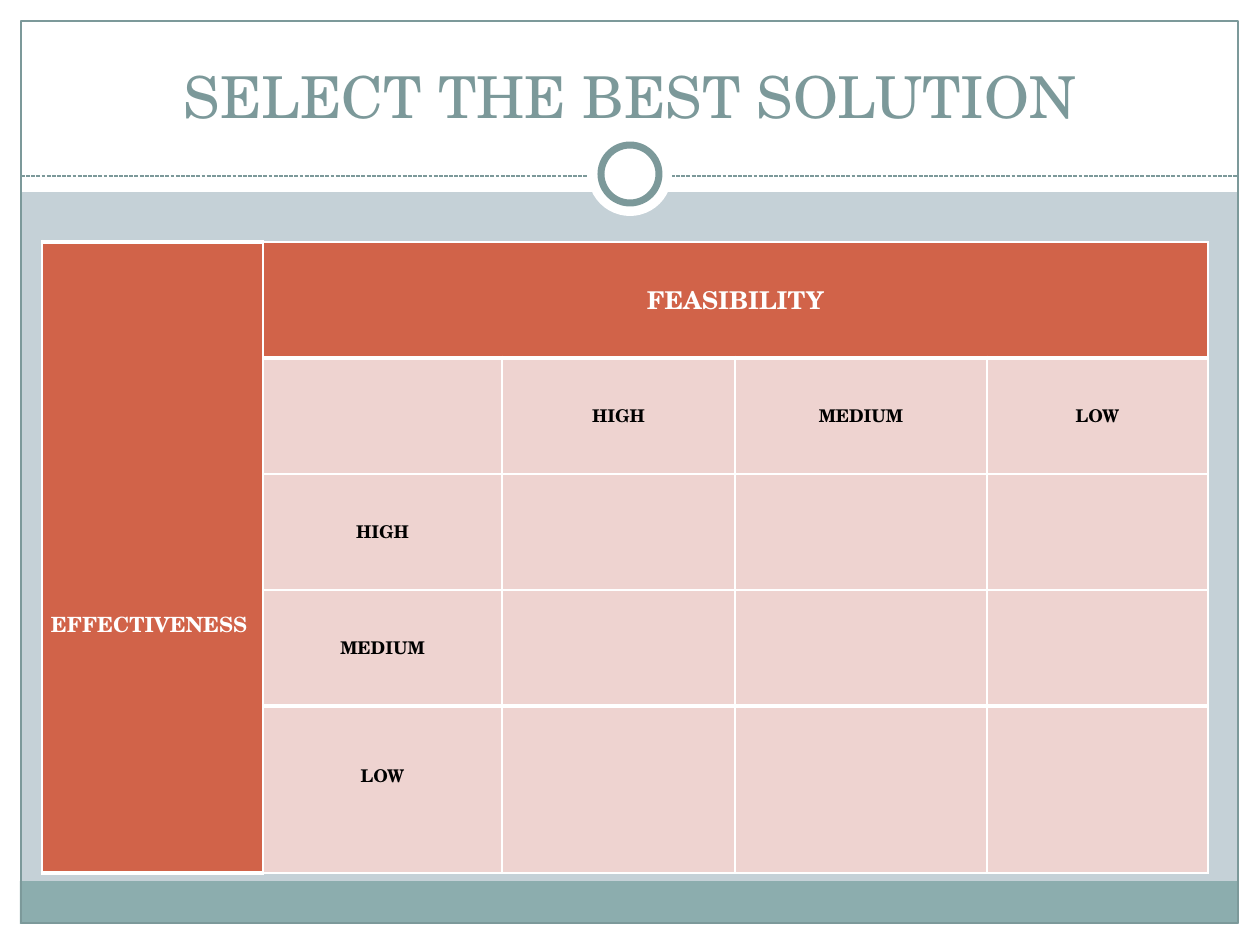
import pptx
import pptx.util
import pptx.dml.color
import pptx.enum.dml
import pptx.enum.shapes
import pptx.enum.text
import pptx.oxml
import pptx.oxml.ns

RGB = pptx.dml.color.RGBColor
WHITE = RGB(0xFF, 0xFF, 0xFF)
BLACK = RGB(0, 0, 0)
MIST = RGB(0xC5, 0xD1, 0xD7)
SAGE = RGB(0x8C, 0xAD, 0xAE)
TEAL = RGB(0x7C, 0x99, 0x9A)
RUST = RGB(0xD1, 0x63, 0x49)
PINK = RGB(0xEE, 0xD3, 0xD0)
FONT = "TeX Gyre Schola"

TITLE = "SELECT THE BEST SOLUTION"
LEVELS = ["HIGH", "MEDIUM", "LOW"]
SIDE = "EFFECTIVENESS"
HEAD = "FEASIBILITY"

WIDE, HIGH = 1260, 945
COLS = [221, 239, 233, 252, 221]
ROWS = [116, 116, 116, 116, 167]
TABLE_AT = (42, 242)
PAD = 9
SIDE_DROP = 134   # top inset that sets the side label below the middle
LAST_LIFT = 27    # bottom inset that lifts the label of the last row

RECT = pptx.enum.shapes.MSO_SHAPE.RECTANGLE
OVAL = pptx.enum.shapes.MSO_SHAPE.OVAL
# kind, left, top, width, height, fill, line width in points
BACK = [
    (RECT, 0, 924, WIDE, 21, WHITE, 0),
    (RECT, 0, 0, WIDE, 192, WHITE, 0),
    (RECT, 0, 0, 21, HIGH, WHITE, 0),
    (RECT, 1239, 0, 21, HIGH, WHITE, 0),
    (RECT, 20, 881, 1218, 43, SAGE, 0),
    (RECT, 21, 21, 1217, 902, None, 0.75),
]
RING = [
    (OVAL, 588, 132, 84, 84, WHITE, 0),
    (OVAL, 601, 145, 58, 58, WHITE, 4),
]


def px(count):
    return round(count * 914400 / 126)


def add_part(slide, kind, left, top, wide, high, fill, line):
    part = slide.shapes.add_shape(kind, px(left), px(top), px(wide), px(high))
    part.shadow.inherit = False
    if fill is None:
        part.fill.background()
    else:
        part.fill.solid()
        part.fill.fore_color.rgb = fill
    if line:
        part.line.color.rgb = TEAL
        part.line.width = pptx.util.Pt(line)
    else:
        part.line.fill.background()


def add_rule(slide):
    rule = slide.shapes.add_connector(
        pptx.enum.shapes.MSO_CONNECTOR.STRAIGHT, px(21), px(176), px(1238), px(176))
    rule.line.color.rgb = TEAL
    rule.line.width = pptx.util.Pt(0.75)
    rule.line.dash_style = pptx.enum.dml.MSO_LINE.SQUARE_DOT
    rule.element.spPr.append(pptx.oxml.parse_xml(
        "<a:effectLst %s/>" % pptx.oxml.ns.nsdecls("a")))


def write(frame, text, size, color, bold=True, center=True):
    line = frame.paragraphs[0]
    line.text = text
    line.font.name = FONT
    line.font.size = pptx.util.Pt(size)
    line.font.bold = bold
    line.font.color.rgb = color
    align = pptx.enum.text.PP_ALIGN
    line.alignment = align.CENTER if center else align.LEFT


def add_title(slide):
    box = slide.shapes.add_textbox(px(42), px(32), px(1176), px(104))
    box.text_frame.word_wrap = True
    box.text_frame.vertical_anchor = pptx.enum.text.MSO_ANCHOR.BOTTOM
    write(box.text_frame, TITLE, 33, TEAL, bold=False)


def set_edges(cell, row, col):
    """White edges: thick around the side label and at two row joints."""
    top = 3 if col == 0 or row in (1, 4) else 1
    base = 3 if col == 0 or row in (0, 3) else 1
    props = cell._tc.get_or_add_tcPr()
    for spot, (side, width) in enumerate(
            [("L", 1), ("R", 1), ("T", top), ("B", base)]):
        props.insert(spot, pptx.oxml.parse_xml(
            '<a:ln%s %s w="%d"><a:solidFill><a:srgbClr val="%s"/></a:solidFill></a:ln%s>'
            % (side, pptx.oxml.ns.nsdecls("a"), pptx.util.Pt(width), WHITE, side)))


def add_grid(slide):
    left, top = TABLE_AT
    grid = slide.shapes.add_table(
        len(ROWS), len(COLS), px(left), px(top), px(sum(COLS)), px(sum(ROWS))).table
    grid.first_row = grid.horz_banding = False
    for col, wide in enumerate(COLS):
        grid.columns[col].width = px(wide)
    for row, high in enumerate(ROWS):
        grid.rows[row].height = px(high)

    for row in range(len(ROWS)):
        for col in range(len(COLS)):
            cell = grid.cell(row, col)
            cell.fill.solid()
            cell.fill.fore_color.rgb = RUST if row == 0 or col == 0 else PINK
            cell.vertical_anchor = pptx.enum.text.MSO_ANCHOR.MIDDLE
            cell.margin_left = cell.margin_right = px(PAD)
            cell.margin_top = cell.margin_bottom = 0
            set_edges(cell, row, col)

    side, head = grid.cell(0, 0), grid.cell(0, 1)
    side.merge(grid.cell(len(ROWS) - 1, 0))
    head.merge(grid.cell(0, len(COLS) - 1))
    side.margin_top = px(SIDE_DROP)
    write(side.text_frame, SIDE, 12, WHITE, center=False)
    write(head.text_frame, HEAD, 14, WHITE)
    for spot, level in enumerate(LEVELS, start=2):
        for cell in (grid.cell(1, spot), grid.cell(spot, 1)):
            write(cell.text_frame, level, 10, BLACK)
    grid.cell(len(ROWS) - 1, 1).margin_bottom = px(LAST_LIFT)


def main():
    deck = pptx.Presentation()
    deck.slide_width, deck.slide_height = px(WIDE), px(HIGH)
    slide = deck.slides.add_slide(deck.slide_layouts[6])
    slide.background.fill.solid()
    slide.background.fill.fore_color.rgb = MIST
    for part in BACK:
        add_part(slide, *part)
    add_rule(slide)
    for part in RING:
        add_part(slide, *part)
    add_title(slide)
    add_grid(slide)
    deck.save("out.pptx")


if __name__ == "__main__":
    main()
